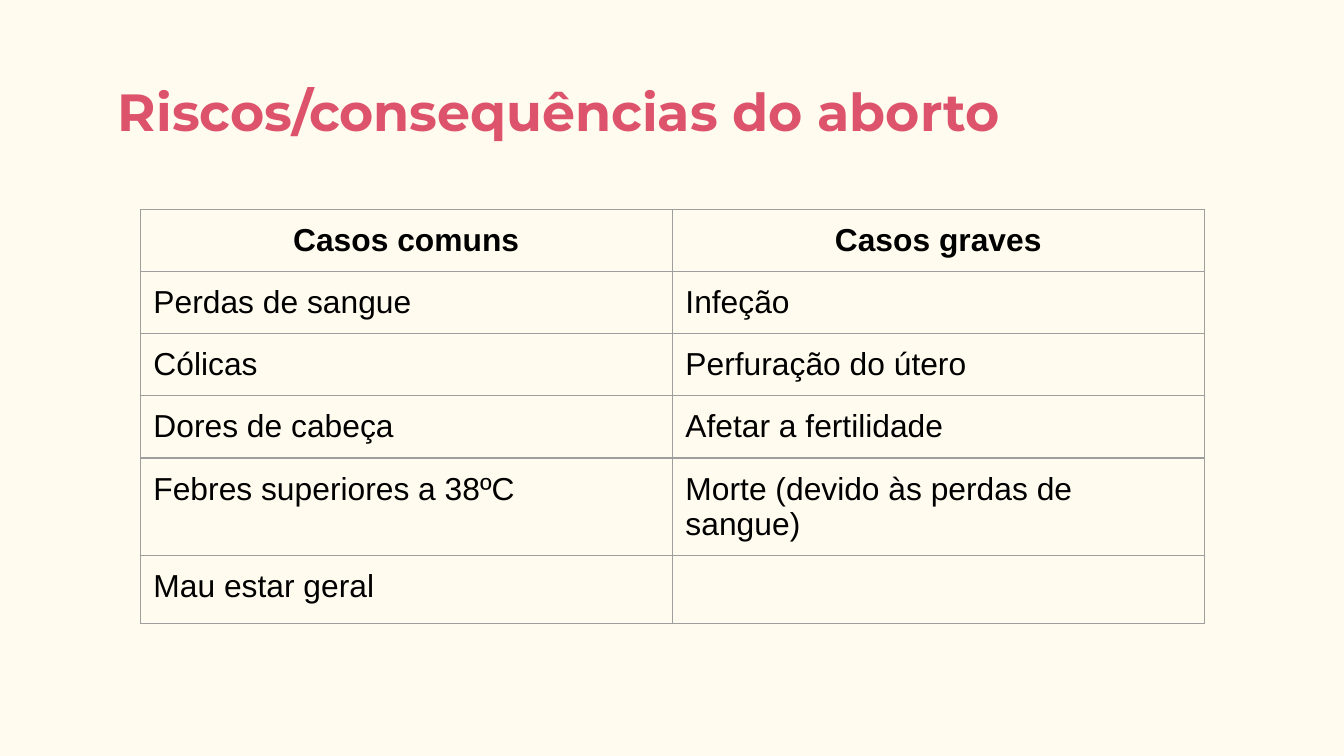
from lxml import etree
from pptx import Presentation
from pptx.dml.color import RGBColor
from pptx.enum import text
from pptx.oxml import ns
from pptx.util import Cm, Pt

CREAM = RGBColor(0xFF, 0xFC, 0xEF)
ROSE = RGBColor(0xDD, 0x53, 0x6B)
BLACK = RGBColor(0, 0, 0)
GREY = RGBColor(0x9E, 0x9E, 0x9E)
INSET = Cm(0.25)

ROWS = [
    ("Casos comuns", "Casos graves"),
    ("Perdas de sangue", "Infeção"),
    ("Cólicas", "Perfuração do útero"),
    ("Dores de cabeça", "Afetar a fertilidade"),
    ("Febres superiores a 38ºC", "Morte (devido às perdas de sangue)"),
    ("Mau estar geral", ""),
]


def set_insets(item):
    item.margin_left = item.margin_right = INSET
    item.margin_top = item.margin_bottom = INSET


def add_borders(cell):
    properties = cell._tc.get_or_add_tcPr()
    for side in ("lnL", "lnR", "lnT", "lnB"):
        line = etree.SubElement(properties, ns.qn(f"a:{side}"), w=str(Pt(0.75)))
        fill = etree.SubElement(line, ns.qn("a:solidFill"))
        etree.SubElement(fill, ns.qn("a:srgbClr"), val=str(GREY))


deck = Presentation()
deck.slide_width, deck.slide_height = Cm(25.4), Cm(14.29)
page = deck.slides.add_slide(deck.slide_layouts[5])
page.background.fill.solid()
page.background.fill.fore_color.rgb = CREAM

title = page.shapes.title
title.left, title.top, title.width, title.height = Cm(1.98), Cm(1.25), Cm(21.41), Cm(1.6)
frame = title.text_frame
frame.text = "Riscos/consequências do aborto"
frame.auto_size = text.MSO_AUTO_SIZE.NONE
frame.vertical_anchor = text.MSO_ANCHOR.TOP
set_insets(frame)
heading = frame.paragraphs[0]
heading.alignment = text.PP_ALIGN.LEFT
span = heading.runs[0]
span.font.name, span.font.size, span.font.bold = "Montserrat", Pt(28), True
span.font.color.rgb = ROSE

table = page.shapes.add_table(
    len(ROWS), 2, Cm(2.65), Cm(3.96), Cm(20.11), Cm(1.07) * len(ROWS)
).table
table.first_row = table.horz_banding = False

for row, labels in enumerate(ROWS):
    for column, label in enumerate(labels):
        cell = table.cell(row, column)
        set_insets(cell)
        add_borders(cell)
        cell.fill.background()
        if not label:
            continue
        cell.text_frame.text = label
        para = cell.text_frame.paragraphs[0]
        para.alignment = text.PP_ALIGN.CENTER if row == 0 else text.PP_ALIGN.LEFT
        span = para.runs[0]
        span.font.name, span.font.size, span.font.bold = "Arial", Pt(17), row == 0
        span.font.color.rgb = BLACK

deck.save("out.pptx")
